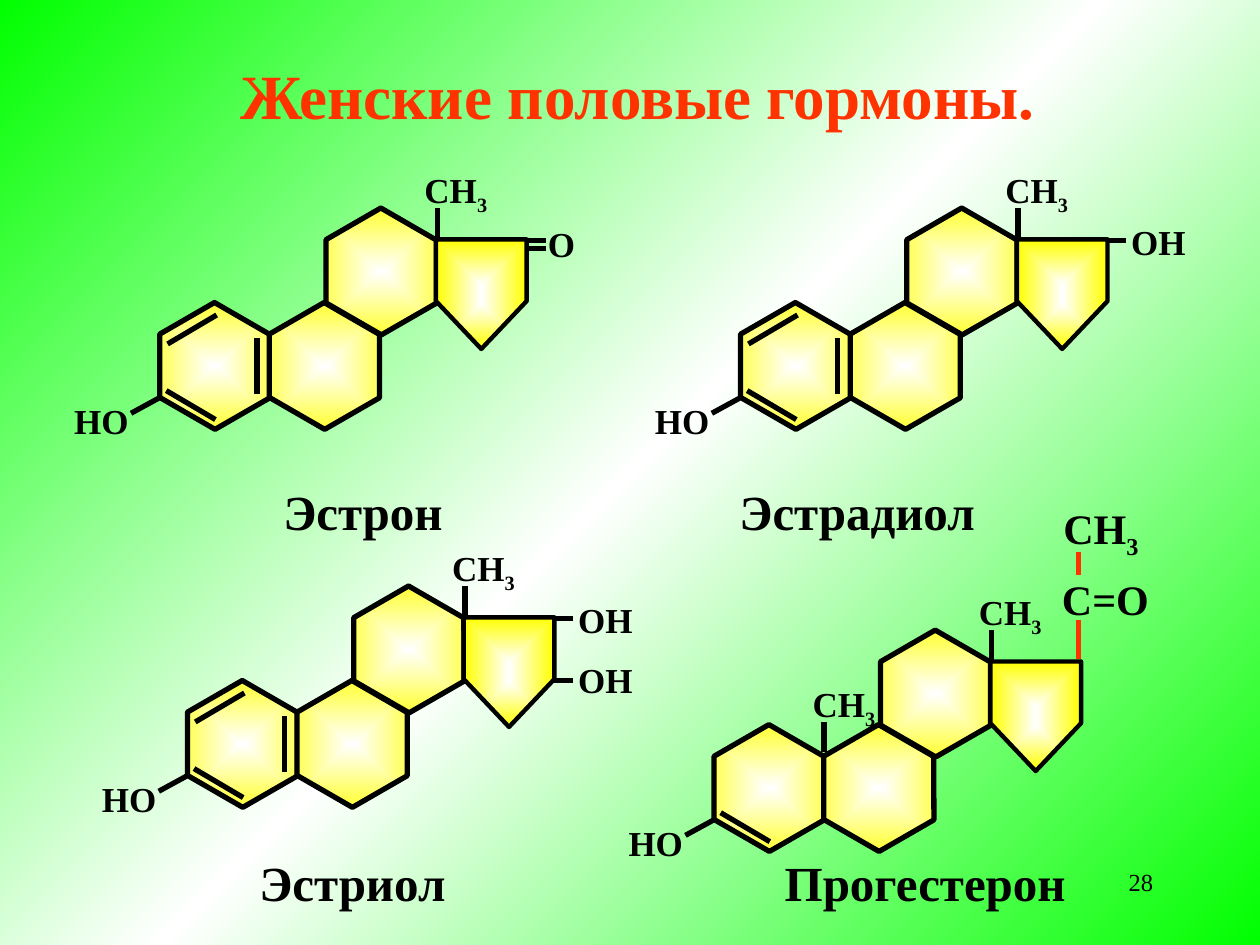
from lxml import etree
from pptx import Presentation
from pptx.dml.color import RGBColor
from pptx.enum.shapes import MSO_CONNECTOR, MSO_SHAPE
from pptx.enum.text import MSO_ANCHOR, MSO_AUTO_SIZE, PP_ALIGN
from pptx.oxml import parse_xml
from pptx.oxml.ns import nsdecls, qn
from pptx.util import Inches, Pt

COLORS = {"red": "FF3300", "black": "000000", "green": "00FF00",
          "white": "FFFFFF", "yellow": "FFFF00"}
FONT = "Times New Roman"


def set_gradient(fill, owner, colors, shade):
    """Give fill evenly spaced stops and a direction, given as DrawingML."""
    fill.gradient()
    grad = next(owner.iter(qn("a:gradFill")))
    for child in list(grad):
        grad.remove(child)
    stops = etree.SubElement(grad, qn("a:gsLst"))
    for i, name in enumerate(colors):
        gs = etree.SubElement(stops, qn("a:gs"), pos=str(100000 * i // (len(colors) - 1)))
        etree.SubElement(gs, qn("a:srgbClr"), val=COLORS[name])
    grad.append(parse_xml(shade))


def add_text(box, text, size, sub="", color="black", bold=True, align=PP_ALIGN.LEFT, wrap=False):
    sp = slide.shapes.add_textbox(*[Inches(v) for v in box])
    tf = sp.text_frame
    tf.word_wrap = wrap
    tf.auto_size = MSO_AUTO_SIZE.NONE if wrap else MSO_AUTO_SIZE.SHAPE_TO_FIT_TEXT
    p = tf.paragraphs[0]
    p.alignment = align
    for part in filter(None, (text, sub)):
        r = p.add_run()
        r.text = part
        r.font.name, r.font.size, r.font.bold = FONT, Pt(size), bold
        r.font.color.rgb = RGBColor.from_string(COLORS[color])
    if sub:
        r.font._element.set("baseline", "-25000")
    return tf


prs = Presentation()
prs.slide_width, prs.slide_height = Inches(10), Inches(7.5)
slide = prs.slides.add_slide(prs.slide_layouts[6])

set_gradient(slide.background.fill, slide.background._cSld, ("green", "white", "green"),
             f'<a:lin {nsdecls("a")} ang="2700000" scaled="1"/>')
add_text((7.17, 6.83, 2.08, 0.5), "28", 14, bold=False, align=PP_ALIGN.RIGHT, wrap=True)
title = add_text((0.81, 0.25, 8.5, 0.99), "Женские половые гормоны.", 36,
                 color="red", align=PP_ALIGN.CENTER, wrap=True)
title.vertical_anchor = MSO_ANCHOR.MIDDLE

# Everything in a molecule is placed from the corner of its first ring.
HEXAGONS = [(0, 0), (0.87, 0), (1.32, -0.75)]
PENTAGON = [(2.62, 0.3), (2.98, -0.08), (2.98, -0.57), (2.26, -0.57), (2.26, -0.08)]
LOWER_DOUBLE = (0.12, 0.63, 0.51, 0.86)
AROMATIC = [(0.13, 0.26, 0.52, 0.03), LOWER_DOUBLE, (0.84, 0.66, 0.84, 0.21)]
COMMON_BONDS = [(0.06, 0.69, -0.16, 0.81), (2.27, -0.58, 2.27, -0.82)]
UPPER_BOND = (2.98, -0.56, 3.13, -0.56)

# origin, name, name box, own bonds, red bonds, groups (x, y, width, height, text, size, subscript)
MOLECULES = [
    ((1.2, 2.47), "Эстрон", (2.15, 3.77, 1.52, 0.57),
     AROMATIC + [UPPER_BOND, (2.98, -0.5, 3.13, -0.5)], [],
     [(3.05, -0.75, 0.42, 0.43, "О", 20, "")]),
    ((5.81, 2.47), "Эстрадиол", (5.77, 3.77, 2.07, 0.57),
     AROMATIC + [UPPER_BOND], [],
     [(3.07, -0.77, 0.63, 0.43, "ОН", 20, "")]),
    ((1.42, 5.47), "Эстриол", (1.96, 6.72, 1.68, 0.57),
     AROMATIC + [UPPER_BOND, (2.98, -0.07, 3.13, -0.07)], [],
     [(3.07, -0.77, 0.63, 0.43, "ОН", 20, ""),
      (3.07, -0.29, 0.63, 0.43, "ОН", 20, "")]),
    ((5.6, 5.82), "Прогестерон", (6.13, 6.72, 2.43, 0.57),
     [LOWER_DOUBLE, (0.94, 0.15, 0.94, -0.09)],
     [(2.96, -0.9, 2.96, -0.59), (2.96, -1.26, 2.96, -1.44)],
     [(0.75, -0.45, 0.71, 0.43, "СН", 20, "3"),
      (2.73, -1.32, 0.89, 0.5, "С=О", 24, ""),
      (2.74, -1.88, 0.81, 0.5, "СН", 24, "3")]),
]
COMMON_GROUPS = [(2.07, -1.18, 0.71, 0.43, "СН", 20, "3"),
                 (-0.71, 0.65, 0.63, 0.43, "НО", 20, "")]

for (ox, oy), name, name_box, own_bonds, red_bonds, groups in MOLECULES:
    rings = []
    for x, y in HEXAGONS:
        sp = slide.shapes.add_shape(MSO_SHAPE.HEXAGON, Inches(ox + x), Inches(oy + y),
                                    Inches(1.01), Inches(0.87))
        sp.adjustments[0] = 0.289
        sp.rotation = 30
        rings.append((sp, "shape", 3))
    points = [(Inches(ox + x), Inches(oy + y)) for x, y in PENTAGON]
    outline = slide.shapes.build_freeform(*points[0])
    outline.add_line_segments(points[1:], close=True)
    rings.append((outline.convert_to_shape(), "rect", 2.5))

    for sp, shade, width in rings:
        sp.shadow.inherit = False
        set_gradient(sp.fill, sp._element.spPr, ("white", "yellow"),
                     f'<a:path {nsdecls("a")} path="{shade}">'
                     '<a:fillToRect l="50000" t="50000" r="50000" b="50000"/></a:path>')
        sp.line.color.rgb = RGBColor.from_string(COLORS["black"])
        sp.line.width = Pt(width)

    for color, bonds in (("black", COMMON_BONDS + own_bonds), ("red", red_bonds)):
        for x1, y1, x2, y2 in bonds:
            bond = slide.shapes.add_connector(
                MSO_CONNECTOR.STRAIGHT, Inches(ox + x1), Inches(oy + y1),
                Inches(ox + x2), Inches(oy + y2))
            bond.line.color.rgb = RGBColor.from_string(COLORS[color])
            bond.line.width = Pt(3)
            etree.SubElement(bond._element.spPr, qn("a:effectLst"))

    for x, y, w, h, text, size, sub in COMMON_GROUPS + groups:
        add_text((ox + x, oy + y, w, h), text, size, sub)
    add_text(name_box, name, 28)

prs.save("out.pptx")
